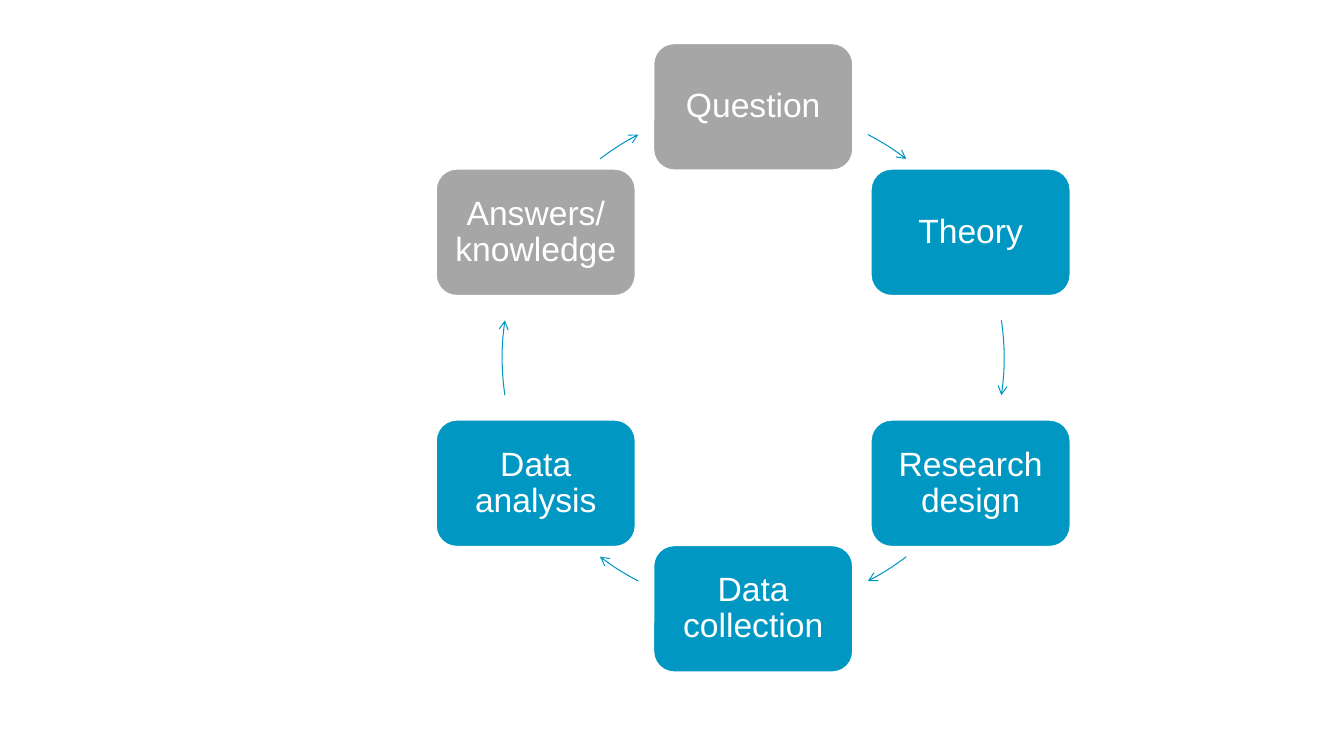
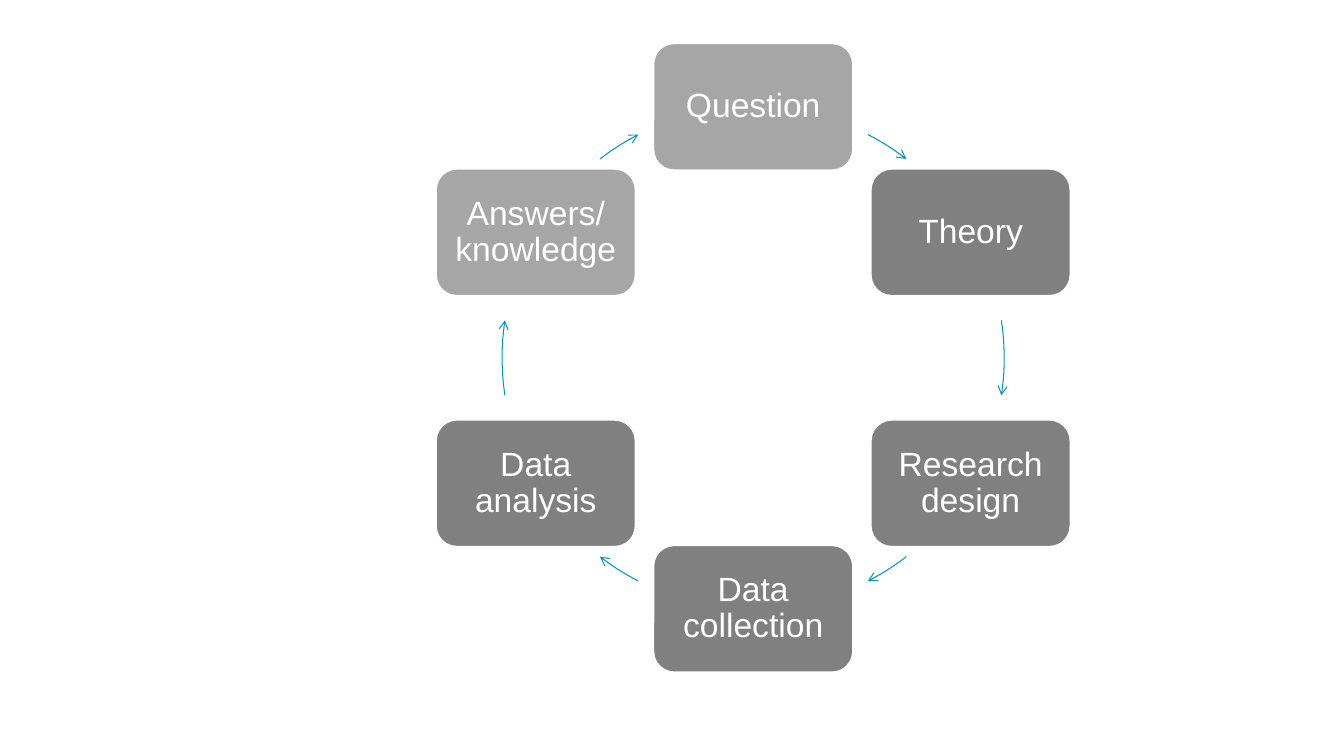
import math

import pptx
import pptx.dml.color
import pptx.enum.shapes
import pptx.enum.text
import pptx.oxml
import pptx.oxml.ns
import pptx.util

Inches = pptx.util.Inches
Pt = pptx.util.Pt
SHAPES = pptx.enum.shapes.MSO_SHAPE

COLORS = {"white": "FFFFFF", "light_gray": "A6A6A6", "dark_gray": "808080", "blue": "0098C3"}

STAGES = [
    ("Question", False),
    ("Theory", True),
    ("Research design", True),
    ("Data collection", True),
    ("Data analysis", True),
    ("Answers/ knowledge", False),
]
METHOD_COLORS = ["blue", "dark_gray"]

CENTER_X, CENTER_Y, RADIUS = 7.47, 3.55, 2.49
BOX_WIDTH, BOX_HEIGHT = 1.99, 1.27
HALF_RING_ARROWS = [(297.2, 307.6), (351.4, 8.6), (52.4, 62.8)]
ARROWS = [
    ((start + turn) % 360, (end + turn) % 360)
    for turn in (0, 180)
    for start, end in HALF_RING_ARROWS
]
ARC_UNITS_PER_DEGREE = 0.6


def rgb(name):
    return pptx.dml.color.RGBColor.from_string(COLORS[name])


def write_text(shape, text, *, size=24, font="Arial", color="white", margin=0.1):
    frame = shape.text_frame
    frame.word_wrap = True
    frame.vertical_anchor = pptx.enum.text.MSO_ANCHOR.MIDDLE
    frame.margin_left = frame.margin_right = Inches(margin)
    frame.margin_top = frame.margin_bottom = Inches(margin)
    paragraph = frame.paragraphs[0]
    paragraph.text = text
    paragraph.alignment = pptx.enum.text.PP_ALIGN.CENTER
    paragraph.line_spacing = 0.9
    paragraph.font.size = Pt(size)
    paragraph.font.name = font
    paragraph.font.color.rgb = rgb(color)


def add_outlined_shape(slide, kind, width, height, *, x, y, line, line_width):
    shape = slide.shapes.add_shape(
        kind, Inches(x - width / 2), Inches(y - height / 2), Inches(width), Inches(height)
    )
    shape.shadow.inherit = False
    shape.line.color.rgb = rgb(line)
    shape.line.width = Pt(line_width)
    return shape


def add_stage(slide, index, text, fill):
    angle = math.radians(360 / len(STAGES) * index - 90)
    box = add_outlined_shape(
        slide, SHAPES.ROUNDED_RECTANGLE, BOX_WIDTH, BOX_HEIGHT,
        x=CENTER_X + RADIUS * math.cos(angle), y=CENTER_Y + RADIUS * math.sin(angle),
        line="white", line_width=2,
    )
    box.fill.solid()
    box.fill.fore_color.rgb = rgb(fill)
    write_text(box, text)


def add_arrow(slide, start, end):
    arc = add_outlined_shape(
        slide, SHAPES.ARC, 2 * RADIUS, 2 * RADIUS,
        x=CENTER_X, y=CENTER_Y, line="blue", line_width=0.75,
    )
    arc.fill.background()
    arc.adjustments[0] = start * ARC_UNITS_PER_DEGREE
    arc.adjustments[1] = end * ARC_UNITS_PER_DEGREE
    namespace = pptx.oxml.ns.nsdecls("a")
    head = pptx.oxml.parse_xml(f'<a:tailEnd {namespace} type="arrow"/>')
    arc.line._get_or_add_ln().append(head)


def add_cycle_slide(presentation, method_color):
    slide = presentation.slides.add_slide(presentation.slide_layouts[6])
    for index, ((text, is_method), (start, end)) in enumerate(zip(STAGES, ARROWS)):
        add_stage(slide, index, text, method_color if is_method else "light_gray")
        add_arrow(slide, start, end)


def main():
    presentation = pptx.Presentation()
    presentation.slide_width = Inches(13.33)
    presentation.slide_height = Inches(7.5)
    for method_color in METHOD_COLORS:
        add_cycle_slide(presentation, method_color)
    presentation.save("out.pptx")


if __name__ == "__main__":
    main()
